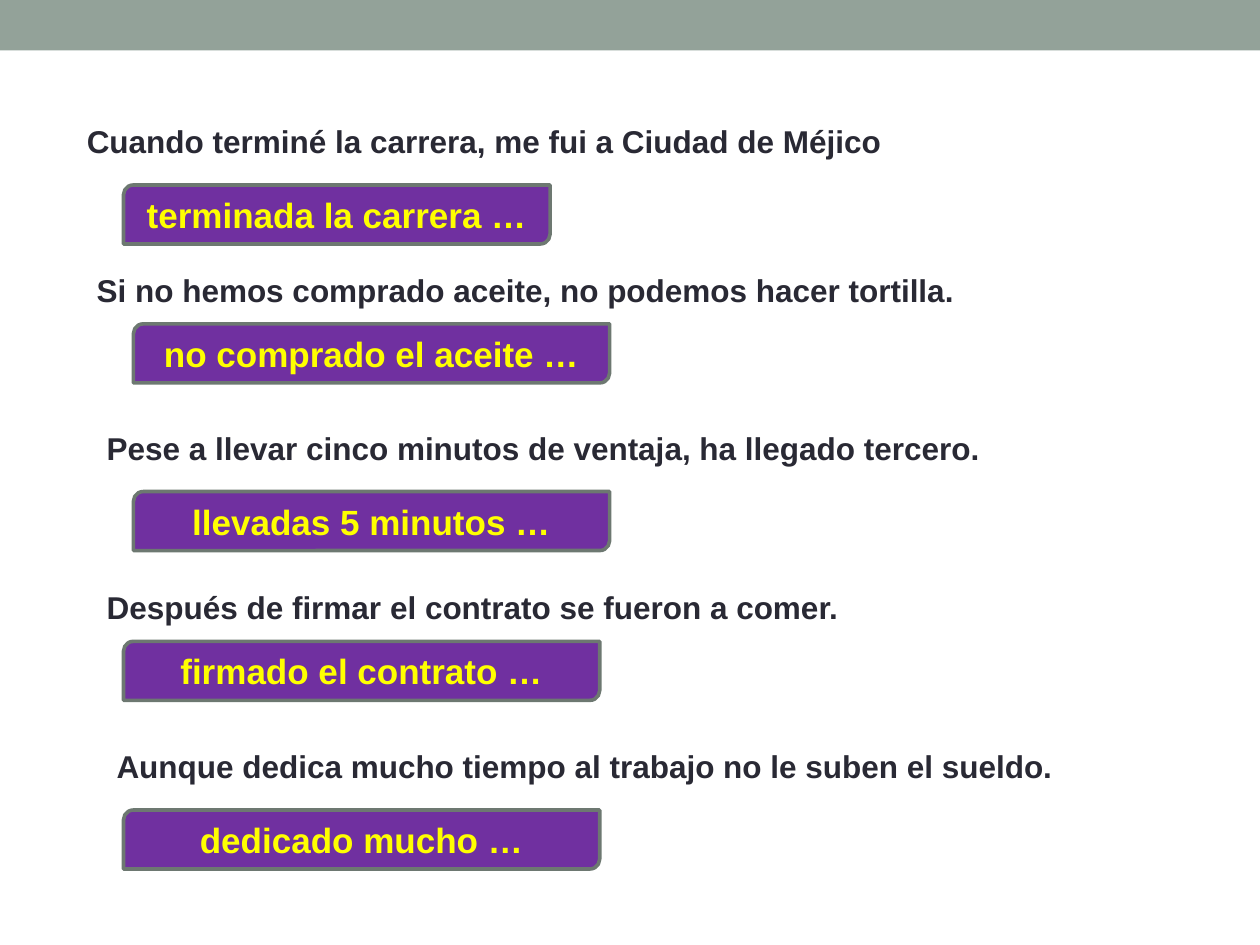
from pptx import Presentation
from pptx.dml.color import RGBColor
from pptx.enum.shapes import MSO_SHAPE
from pptx.enum.text import MSO_ANCHOR, PP_ALIGN
from pptx.util import Cm, Pt

RECTANGLE = MSO_SHAPE.RECTANGLE
ROUND_DIAGONAL = MSO_SHAPE.ROUND_2_DIAG_RECTANGLE
MIDDLE = MSO_ANCHOR.MIDDLE
CENTER = PP_ALIGN.CENTER

SAGE = RGBColor(0x93, 0xA2, 0x99)
DARK_SAGE = RGBColor(0x6D, 0x78, 0x71)
INK = RGBColor(0x29, 0x29, 0x34)
PURPLE = RGBColor(0x70, 0x30, 0xA0)
YELLOW = RGBColor(0xFF, 0xFF, 0x00)

SENTENCE_HEIGHT = Cm(1.02)
ANSWER_HEIGHT = Cm(1.19)

# Sentence, left, top, width; answer, left, top, width (in cm)
EXERCISES = [
    ("Cuando terminé la carrera, me fui a Ciudad de Méjico", 1.5, 2.34, 18.2,
     "terminada la carrera …", 2.49, 3.73, 8.6),
    ("Si no hemos comprado aceite, no podemos hacer tortilla.", 1.7, 5.33, 18.2,
     "no comprado el aceite …", 2.69, 6.53, 9.6),
    ("Pese a llevar cinco minutos de ventaja, ha llegado tercero.", 1.9, 8.53, 20.8,
     "llevadas 5 minutos …", 2.69, 9.91, 9.6),
    ("Después de firmar el contrato se fueron a comer.", 1.9, 11.73, 20.4,
     "firmado el contrato …", 2.49, 12.93, 9.6),
    ("Aunque dedica mucho tiempo al trabajo no le suben el sueldo.", 2.1, 14.93, 22,
     "dedicado mucho …", 2.49, 16.33, 9.6),
]


def write_bold(shape, text, size, color):
    text_frame = shape.text_frame
    text_frame.word_wrap = True
    text_frame.text = text
    font = text_frame.paragraphs[0].runs[0].font
    font.name = "Arial"
    font.size = Pt(size)
    font.bold = True
    font.color.rgb = color


presentation = Presentation()
presentation.slide_width = Cm(25.4)
presentation.slide_height = Cm(19.05)
slide = presentation.slides.add_slide(presentation.slide_layouts[6])

# Top band
band = slide.shapes.add_shape(RECTANGLE, 0, 0, presentation.slide_width, Cm(1.02))
band.shadow.inherit = False
band.fill.solid()
band.fill.fore_color.rgb = SAGE
band.line.fill.background()

for sentence, left, top, width, answer, answer_left, answer_top, answer_width in EXERCISES:
    # Sentence to transform
    sentence_box = slide.shapes.add_textbox(Cm(left), Cm(top), Cm(width), SENTENCE_HEIGHT)
    write_bold(sentence_box, sentence, 18, INK)

    # Answer with the participle
    answer_box = slide.shapes.add_shape(ROUND_DIAGONAL, Cm(answer_left), Cm(answer_top),
                                        Cm(answer_width), ANSWER_HEIGHT)
    answer_box.shadow.inherit = False
    answer_box.fill.solid()
    answer_box.fill.fore_color.rgb = PURPLE
    answer_box.line.color.rgb = DARK_SAGE
    answer_box.line.width = Pt(2.08)
    write_bold(answer_box, answer, 20, YELLOW)
    answer_box.text_frame.vertical_anchor = MIDDLE
    answer_box.text_frame.paragraphs[0].alignment = CENTER

presentation.save("out.pptx")
